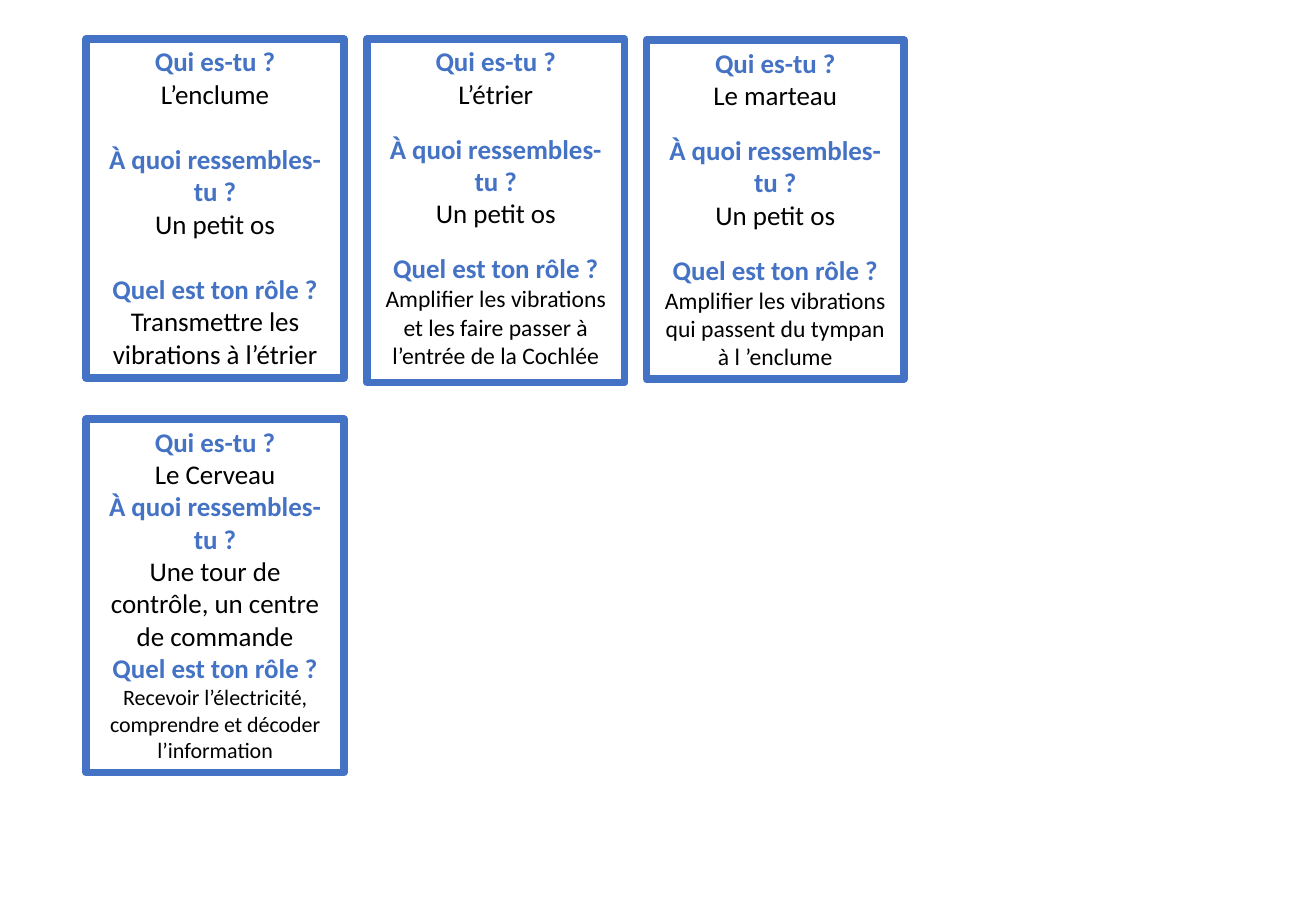
from pptx import Presentation
from pptx.dml.color import RGBColor
from pptx.enum.text import MSO_ANCHOR, MSO_AUTO_SIZE, PP_ALIGN
from pptx.util import Inches, Pt

CENTER = PP_ALIGN.CENTER
TOP = MSO_ANCHOR.TOP
GROW = MSO_AUTO_SIZE.SHAPE_TO_FIT_TEXT
BLUE, BLACK = "4472C4", "000000"
WIDTH = 2.12
ASKS = ["Qui es-tu ?", "À quoi ressembles-tu ?", "Quel est ton rôle ?"]


def color(code):
    return RGBColor.from_string(code)


# Cards: left, top, height, gap before a question, size of the last answer, answers
cards = [
    (0.71, 0.32, 2.79, 19.5, 16,
     ["L’enclume", "Un petit os", "Transmettre les vibrations à l’étrier"]),
    (3.02, 0.32, 2.83, 13.4, 14,
     ["L’étrier", "Un petit os",
      "Amplifier les vibrations et les faire passer à l’entrée de la Cochlée"]),
    (5.32, 0.33, 2.79, 13.4, 14,
     ["Le marteau", "Un petit os",
      "Amplifier les vibrations qui passent du tympan à l ’enclume"]),
    (0.71, 3.45, 2.91, 0, 13,
     ["Le Cerveau", "Une tour de contrôle, un centre de commande",
      "Recevoir l’électricité, comprendre et décoder l’information"]),
]

# Slide
prs = Presentation()
prs.slide_width, prs.slide_height = Inches(10.83), Inches(7.5)
slide = prs.slides.add_slide(prs.slide_layouts[6])

for left, top, height, gap, small, answers in cards:
    # Framed box
    card = slide.shapes.add_textbox(Inches(left), Inches(top), Inches(WIDTH), Inches(height))
    card.line.color.rgb = color(BLUE)
    card.line.width = Pt(4.5)
    frame = card.text_frame
    frame.word_wrap = True
    frame.auto_size = GROW
    frame.vertical_anchor = TOP

    # Questions in bold blue, each followed by its answer
    lines = [text for pair in zip(ASKS, answers) for text in pair]
    frame.text = "\n".join(lines)
    for i, para in enumerate(frame.paragraphs):
        ask = i % 2 == 0
        para.alignment = CENTER
        if ask and i > 0:
            para.space_before = Pt(gap)
        font = para.runs[0].font
        font.name = "Calibri"
        font.size = Pt(small if i == len(lines) - 1 else 16)
        font.bold = ask
        font.color.rgb = color(BLUE if ask else BLACK)

prs.save("out.pptx")
